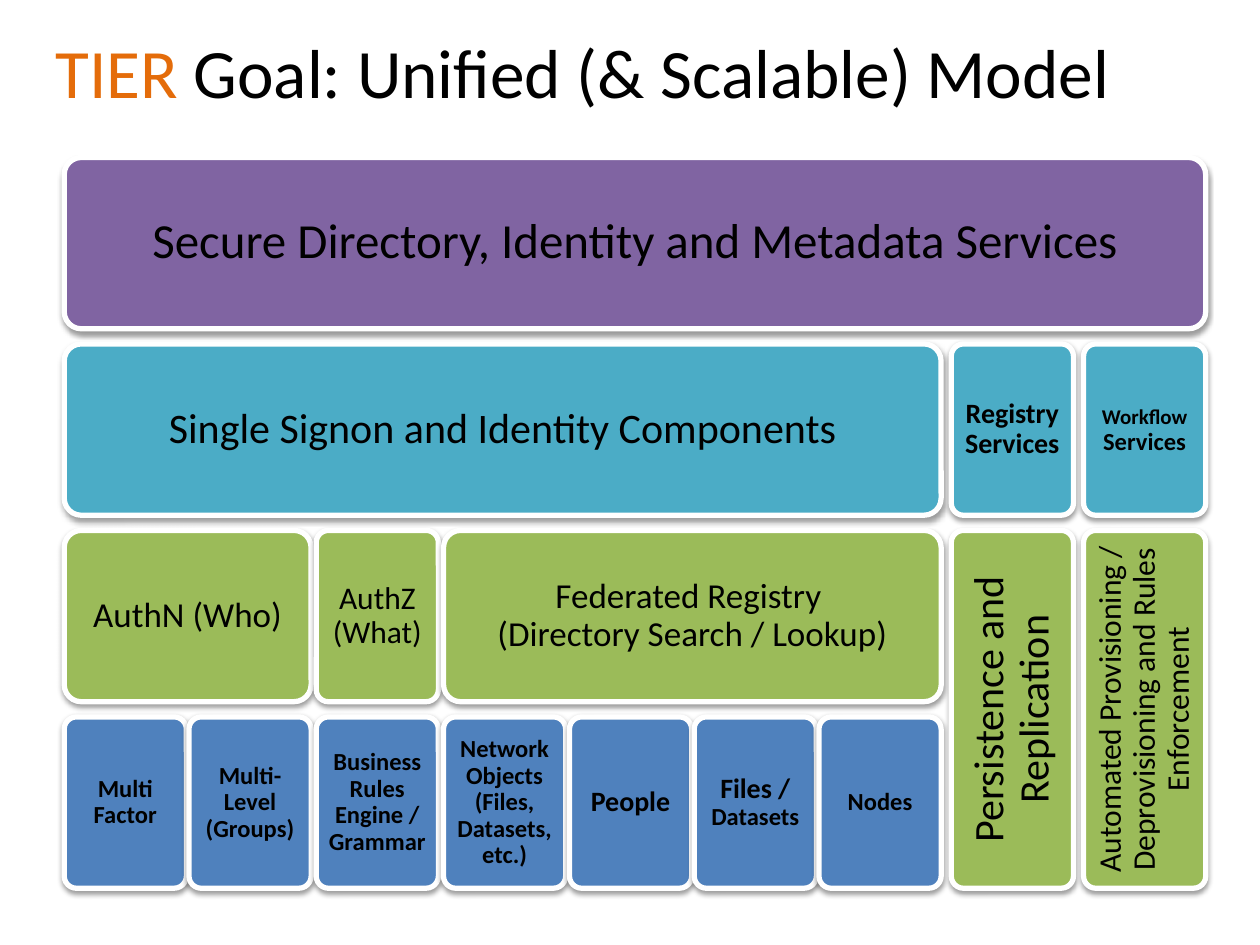
from dataclasses import dataclass

from lxml import etree
from pptx import Presentation
from pptx import util as u
from pptx.dml.color import RGBColor
from pptx.enum import shapes, text
from pptx.oxml.ns import qn

FONT = "Calibri"
BLACK, WHITE, ORANGE = "000000", "FFFFFF", "E46C0A"
PURPLE, TEAL, GREEN, BLUE = "8064A2", "4BACC6", "9BBB59", "4F81BD"
COLS = (0.51, 1.5, 2.51, 3.52, 4.52, 5.51, 6.5, 7.55, 8.6)
TOP, ROW_STEP = 1.25, 1.48
CELL_W, CELL_H = 0.97, 1.36


@dataclass
class Block:
    row: int
    first: int
    last: int
    fill: str
    runs: tuple[tuple[str, float], ...]
    bold: bool = False
    rows: int = 1


BLOCKS = (
    Block(0, 0, 8, PURPLE, (("Secure Directory, Identity and Metadata Services", 28),)),
    Block(1, 0, 6, TEAL, (("Single Signon and Identity Components", 24),)),
    Block(2, 0, 1, GREEN, (("AuthN (Who)", 20),)),
    Block(3, 0, 0, BLUE, (("Multi Factor", 14),), bold=True),
    Block(3, 1, 1, BLUE, (("Multi-Level (Groups)", 14),), bold=True),
    Block(2, 2, 2, GREEN, (("AuthZ (What)", 18),)),
    Block(3, 2, 2, BLUE, (("Business Rules Engine / Grammar", 14),), bold=True),
    Block(2, 3, 6, GREEN, (("Federated Registry \n(Directory Search / Lookup)", 20),)),
    Block(3, 3, 3, BLUE, (("Network Objects (Files, Datasets, etc.)", 14),), bold=True),
    Block(3, 4, 4, BLUE, (("People", 16),), bold=True),
    Block(3, 5, 5, BLUE, (("Files / ", 16), ("Datasets", 14)), bold=True),
    Block(3, 6, 6, BLUE, (("Nodes", 14),), bold=True),
    Block(1, 7, 7, TEAL, (("Registry Services", 16),), bold=True),
    Block(2, 7, 7, GREEN, (("Persistence and Replication", 24),), rows=2),
    Block(1, 8, 8, TEAL, (("Workflow", 12), (" Services", 14)), bold=True),
    Block(2, 8, 8, GREEN, (("Automated Provisioning / Deprovisioning and Rules Enforcement", 18),), rows=2),
)


def rgb(value: str) -> RGBColor:
    return RGBColor.from_string(value)


def add_text(p, content: str, *, size: float, color: str = BLACK, bold: bool = False) -> None:
    for i, line in enumerate(content.split("\n")):
        if i:
            p.add_line_break()
        r = p.add_run()
        r.text = line
        r.font.name = FONT
        r.font.size = u.Pt(size)
        r.font.bold = bold
        r.font.color.rgb = rgb(color)


def add_shadow(sp) -> None:
    effects = etree.SubElement(sp._element.spPr, qn("a:effectLst"))
    shadow = etree.SubElement(effects, qn("a:outerShdw"), blurRad=str(u.Pt(3.1)),
                              dist=str(u.Pt(1.6)), dir="5400000", rotWithShape="0")
    color = etree.SubElement(shadow, qn("a:srgbClr"), val=BLACK)
    etree.SubElement(color, qn("a:alpha"), val="38000")


def set_frame(tf, inset: float):
    tf.word_wrap = True
    tf.vertical_anchor = text.MSO_ANCHOR.MIDDLE
    tf.margin_left = tf.margin_right = u.Inches(inset)
    tf.margin_top = tf.margin_bottom = u.Inches(inset)
    p = tf.paragraphs[0]
    p.alignment = text.PP_ALIGN.CENTER
    return p


def draw_block(s, block: Block) -> None:
    left = COLS[block.first]
    width = COLS[block.last] + CELL_W - left
    height = CELL_H + (block.rows - 1) * ROW_STEP
    sp = s.shapes.add_shape(shapes.MSO_SHAPE.ROUNDED_RECTANGLE,
                            u.Inches(left), u.Inches(TOP + block.row * ROW_STEP),
                            u.Inches(width), u.Inches(height))
    sp.adjustments[0] = 0.1
    sp.fill.solid()
    sp.fill.fore_color.rgb = rgb(block.fill)
    sp.line.color.rgb = rgb(WHITE)
    sp.line.width = u.Pt(3)
    add_shadow(sp)
    tf = sp.text_frame
    p = set_frame(tf, block.runs[0][1] / 240)
    p.line_spacing = 0.9
    if block.rows > 1:
        tf._txBody.bodyPr.set("vert", "vert270")
    for content, size in block.runs:
        add_text(p, content, size=size, bold=block.bold)


def draw_title(s) -> None:
    box = s.shapes.add_textbox(u.Inches(0), u.Inches(0.2), u.Inches(9.25), u.Inches(0.72))
    p = set_frame(box.text_frame, 0.05)
    add_text(p, "TIER", size=39.6, color=ORANGE)
    add_text(p, " Goal: Unified (& Scalable) Model", size=39.6)


def main() -> None:
    prs = Presentation()
    prs.slide_width, prs.slide_height = u.Inches(10), u.Inches(7.5)
    s = prs.slides.add_slide(prs.slide_layouts[6])
    draw_title(s)
    for block in BLOCKS:
        draw_block(s, block)
    prs.save("out.pptx")


if __name__ == "__main__":
    main()
